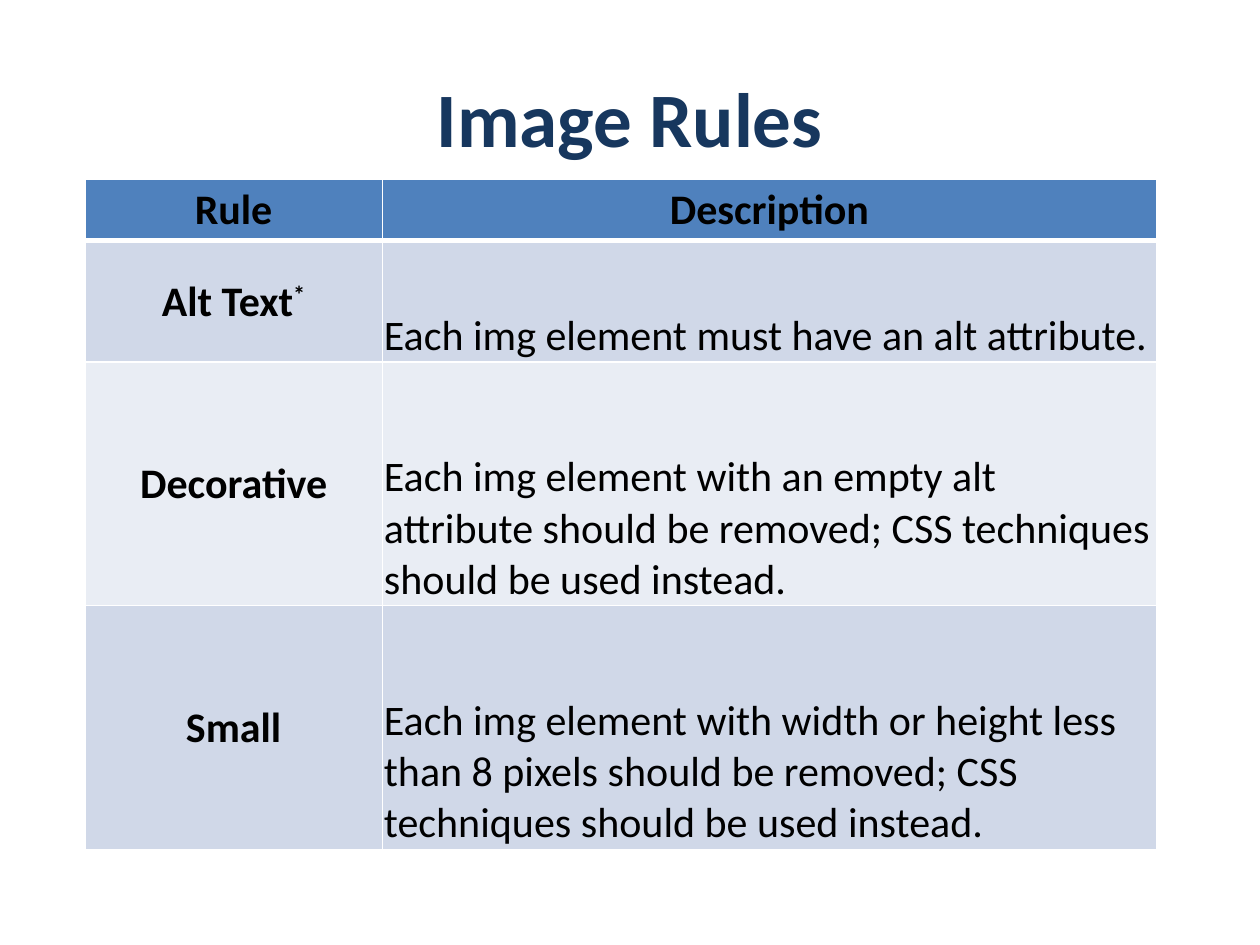
from typing import NamedTuple

from lxml.etree import SubElement
from pptx import Presentation
from pptx.dml.color import RGBColor
from pptx.enum.text import MSO_ANCHOR, PP_ALIGN
from pptx.oxml.ns import qn
from pptx.slide import Slide
from pptx.table import Table, _Cell
from pptx.text.text import _Paragraph
from pptx.util import Cm, Pt

NAVY = RGBColor(0x17, 0x37, 0x5E)
BLACK = RGBColor(0x00, 0x00, 0x00)
WHITE = RGBColor(0xFF, 0xFF, 0xFF)
HEADER_BLUE = RGBColor(0x4F, 0x81, 0xBD)
BANDS = (RGBColor(0xD0, 0xD8, 0xE8), RGBColor(0xE9, 0xED, 0xF4))
FONT = "Calibri"
COLUMN_WIDTHS = (Cm(6), Cm(15.6))


class Rule(NamedTuple):
    name: str
    description: str
    height: Cm
    mark: str = ""


HEADER = Rule("Rule", "Description", Cm(1.24))
RULES = (
    Rule("Alt Text", "Each img element must have an alt attribute.", Cm(2.45), "*"),
    Rule(
        "Decorative",
        "Each img element with an empty alt attribute should be removed; "
        "CSS techniques should be used instead.",
        Cm(4.91),
    ),
    Rule(
        "Small",
        "Each img element with width or height less than 8 pixels should be removed; "
        "CSS techniques should be used instead.",
        Cm(4.91),
    ),
)


def add_run(paragraph: _Paragraph, text: str, size: int, color: RGBColor,
            bold: bool, baseline: int = 0) -> None:
    """Append one formatted run, raised by baseline percent."""
    run = paragraph.add_run()
    run.text = text
    font = run.font
    font.name, font.size, font.bold = FONT, Pt(size), bold
    font.color.rgb = color
    if baseline:
        run._r.get_or_add_rPr().set("baseline", str(baseline * 1000))


def add_borders(cell: _Cell, bottom: float) -> None:
    """Draw white borders, with a chosen weight below the cell."""
    properties = cell._tc.get_or_add_tcPr()
    for side, weight in (("L", 1), ("R", 1), ("T", 1), ("B", bottom)):
        line = SubElement(properties, qn(f"a:ln{side}"), w=str(Pt(weight)))
        solid = SubElement(line, qn("a:solidFill"))
        SubElement(solid, qn("a:srgbClr"), val=str(WHITE))


def style_cell(cell: _Cell, fill: RGBColor, centered: bool, bottom: float) -> _Paragraph:
    """Format a cell and return its paragraph."""
    add_borders(cell, bottom)
    cell.fill.solid()
    cell.fill.fore_color.rgb = fill
    cell.margin_left = cell.margin_right = cell.margin_top = Cm(0.03)
    cell.margin_bottom = Cm(0)
    cell.vertical_anchor = MSO_ANCHOR.MIDDLE if centered else MSO_ANCHOR.BOTTOM
    paragraph = cell.text_frame.paragraphs[0]
    paragraph.alignment = PP_ALIGN.CENTER if centered else PP_ALIGN.LEFT
    return paragraph


def fill_row(table: Table, index: int, rule: Rule) -> None:
    """Write one rule, or the header, into its table row."""
    is_header = index == 0
    fill = HEADER_BLUE if is_header else BANDS[(index - 1) % 2]
    bottom = 3 if is_header else 1
    table.rows[index].height = rule.height
    name = style_cell(table.cell(index, 0), fill, True, bottom)
    add_run(name, rule.name, 24, BLACK, True)
    if rule.mark:
        add_run(name, rule.mark, 24, BLACK, True, 30)
    description = style_cell(table.cell(index, 1), fill, is_header, bottom)
    add_run(description, rule.description, 24, BLACK, is_header)


def add_title(slide: Slide, text: str) -> None:
    """Add the centred slide title."""
    title = slide.shapes.add_textbox(Cm(1.27), Cm(0.76), Cm(22.86), Cm(3.18))
    frame = title.text_frame
    frame.word_wrap = True
    frame.vertical_anchor = MSO_ANCHOR.MIDDLE
    paragraph = frame.paragraphs[0]
    paragraph.alignment = PP_ALIGN.CENTER
    add_run(paragraph, text, 44, NAVY, True)


def add_rules_table(slide: Slide) -> None:
    """Add the table of image rules."""
    rows = (HEADER, *RULES)
    table = slide.shapes.add_table(
        len(rows), len(COLUMN_WIDTHS), Cm(1.71), Cm(3.61),
        sum(COLUMN_WIDTHS), sum(rule.height for rule in rows),
    ).table
    for column, width in zip(table.columns, COLUMN_WIDTHS):
        column.width = width
    for index, rule in enumerate(rows):
        fill_row(table, index, rule)


def main() -> None:
    """Build and save the image rules slide."""
    presentation = Presentation()
    presentation.slide_width, presentation.slide_height = Cm(25.4), Cm(19.05)
    slide = presentation.slides.add_slide(presentation.slide_layouts[6])
    add_title(slide, "Image Rules")
    add_rules_table(slide)
    presentation.save("out.pptx")


if __name__ == "__main__":
    main()
